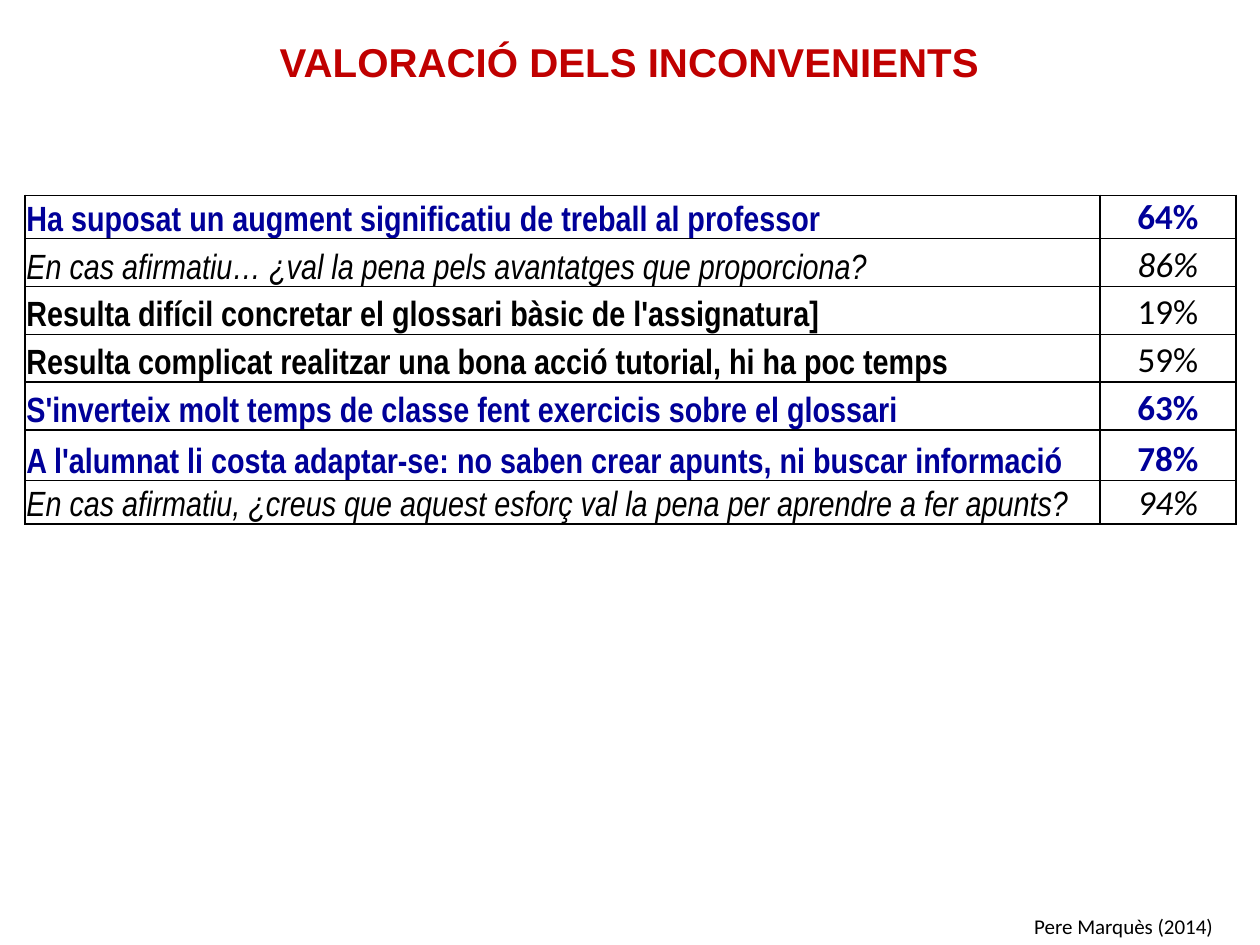
from dataclasses import dataclass

from lxml import etree
from pptx import Presentation
from pptx.dml.color import RGBColor
from pptx.enum.text import MSO_ANCHOR, PP_ALIGN
from pptx.oxml.ns import qn
from pptx.util import Inches, Pt

LEFT, CENTER = PP_ALIGN.LEFT, PP_ALIGN.CENTER
BOTTOM = MSO_ANCHOR.BOTTOM
RED = RGBColor(0xC0, 0x00, 0x00)
BLUE = RGBColor(0x00, 0x00, 0x99)
BLACK = RGBColor(0x00, 0x00, 0x00)
WHITE = RGBColor(0xFF, 0xFF, 0xFF)


@dataclass
class Style:
    font: str
    size: float
    color: RGBColor = BLACK
    bold: bool = False
    italic: bool = False
    align: PP_ALIGN = LEFT


@dataclass
class Drawback:
    statement: str
    share: str
    height: float = 0.38
    highlighted: bool = False
    follow_up: bool = False


DRAWBACKS = [
    Drawback("Ha suposat un augment significatiu de treball al professor", "64%",
             height=0.34, highlighted=True),
    Drawback("En cas afirmatiu… ¿val la pena pels avantatges que proporciona?", "86%",
             follow_up=True),
    Drawback("Resulta difícil concretar el glossari bàsic de l'assignatura]", "19%"),
    Drawback("Resulta complicat realitzar una bona acció tutorial, hi ha poc temps", "59%"),
    Drawback("S'inverteix molt temps de classe fent exercicis sobre el glossari", "63%",
             highlighted=True),
    Drawback("A l'alumnat li costa adaptar-se: no saben crear apunts, ni buscar informació",
             "78%", height=0.4, highlighted=True),
    Drawback("En cas afirmatiu, ¿creus que aquest esforç val la pena per aprendre a fer apunts?",
             "94%", height=0.34, follow_up=True),
]
COLUMN_WIDTHS = (8.53, 1.08)


def write(tf, text: str, style: Style) -> None:
    p = tf.paragraphs[0]
    p.text = text
    p.alignment = style.align
    p.font.name = style.font
    p.font.size = Pt(style.size)
    p.font.bold = style.bold
    p.font.italic = style.italic
    p.font.color.rgb = style.color


def add_text(s, left: float, top: float, width: float, height: float,
             text: str, style: Style) -> None:
    tf = s.shapes.add_textbox(Inches(left), Inches(top), Inches(width), Inches(height)).text_frame
    tf.word_wrap = True
    write(tf, text, style)


def add_borders(cell) -> None:
    tc_pr = cell._tc.get_or_add_tcPr()
    for i, side in enumerate(("lnL", "lnR", "lnT", "lnB")):
        ln = etree.Element(qn(f"a:{side}"), w=str(Pt(1)))
        fill = etree.SubElement(ln, qn("a:solidFill"))
        etree.SubElement(fill, qn("a:srgbClr"), val=str(BLACK))
        tc_pr.insert(i, ln)


def fill_cell(cell, text: str, style: Style) -> None:
    cell.margin_left = cell.margin_right = cell.margin_top = Inches(0.01)
    cell.margin_bottom = 0
    cell.vertical_anchor = BOTTOM
    cell.fill.solid()
    cell.fill.fore_color.rgb = WHITE
    add_borders(cell)
    write(cell.text_frame, text, style)


def add_drawbacks(s, left: float, top: float) -> None:
    height = sum(d.height for d in DRAWBACKS)
    table = s.shapes.add_table(len(DRAWBACKS), len(COLUMN_WIDTHS), Inches(left), Inches(top),
                               Inches(sum(COLUMN_WIDTHS)), Inches(height)).table
    table.first_row = table.horz_banding = False
    for column, width in zip(table.columns, COLUMN_WIDTHS):
        column.width = Inches(width)
    for i, d in enumerate(DRAWBACKS):
        table.rows[i].height = Inches(d.height)
        color = BLUE if d.highlighted else BLACK
        fill_cell(table.cell(i, 0), d.statement,
                  Style("Arial Narrow", 20, color, not d.follow_up, d.follow_up))
        fill_cell(table.cell(i, 1), d.share,
                  Style("Calibri", 20, color, d.highlighted, d.follow_up, CENTER))


def main() -> None:
    prs = Presentation()
    prs.slide_width, prs.slide_height = Inches(10), Inches(7.5)
    s = prs.slides.add_slide(prs.slide_layouts[6])
    add_text(s, 8.11, 7.2, 1.89, 0.3, "Pere Marquès (2014)", Style("Calibri", 12))
    add_text(s, 0, 0.25, 10, 0.82, "VALORACIÓ DELS INCONVENIENTS",
             Style("Arial", 23, RED, bold=True, align=CENTER))
    add_drawbacks(s, 0.2, 1.55)
    prs.save("out.pptx")


if __name__ == "__main__":
    main()
